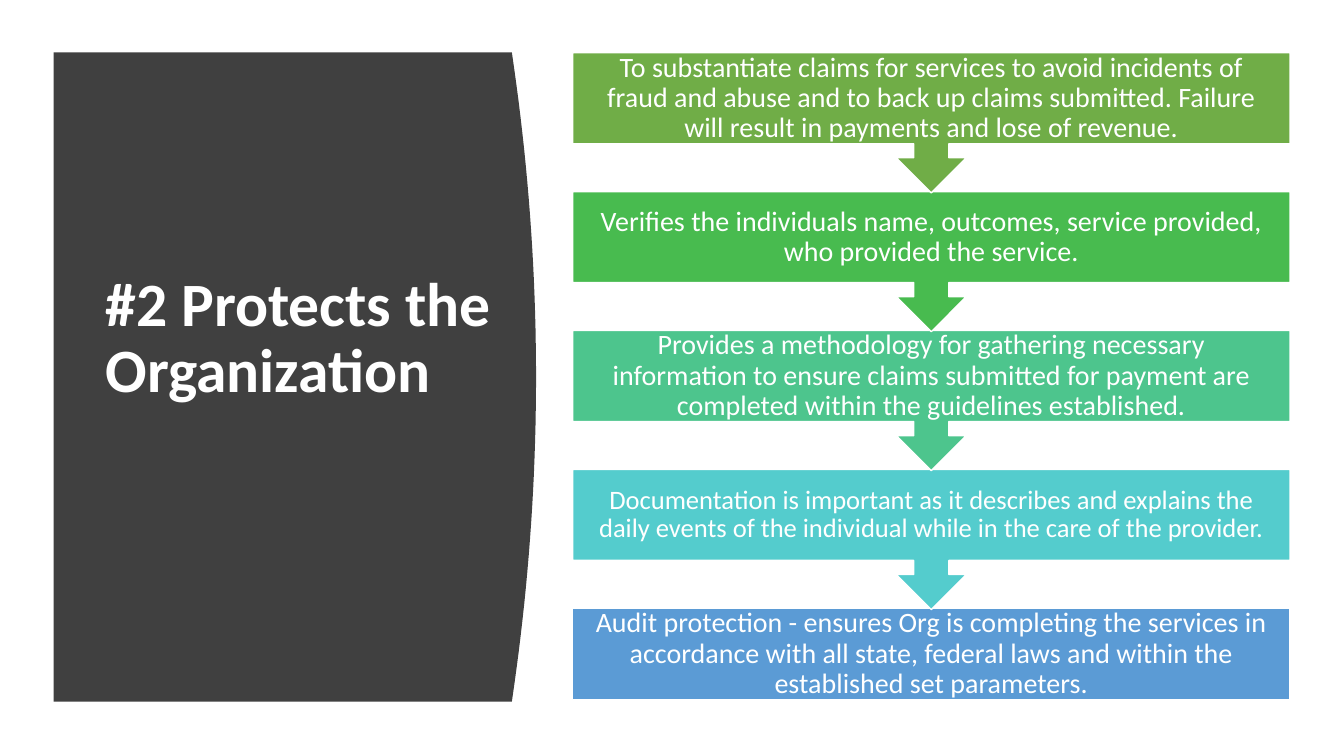
"""Build the slide "#2 Protects the Organization" with its chain of five reasons."""
from pptx import Presentation
from pptx.dml.color import RGBColor
from pptx.enum.shapes import MSO_SHAPE as Shape
from pptx.enum.text import MSO_ANCHOR as Anchor, PP_ALIGN as Align
from pptx.util import Cm, Pt


def paint(fill, color):
    fill.solid()
    fill.fore_color.rgb = RGBColor.from_string(color)


def write(shape, text, size, align, side_margin, bold=False):
    frame = shape.text_frame
    frame.text = text
    frame.word_wrap = True
    frame.vertical_anchor = Anchor.MIDDLE
    frame.margin_left = frame.margin_right = Cm(side_margin)
    frame.margin_top = frame.margin_bottom = 0
    paragraph = frame.paragraphs[0]
    paragraph.alignment = align
    paragraph.line_spacing = 0.9
    font = paragraph.runs[0].font
    font.name = "Calibri"
    font.size = Pt(size)
    font.bold = bold
    paint(font.fill, "FFFFFF")


presentation = Presentation()
presentation.slide_width = Cm(33.87)
presentation.slide_height = Cm(19.05)
slide = presentation.slides.add_slide(presentation.slide_layouts[6])

panel_left, panel_edge, bulge = 1.35, 12.9, 0.61
panel_middle, half_height = 9.5, 8.18
steps = 20
curve = []
for step in range(-steps, steps + 1):
    ratio = step / steps
    curve.append((Cm(panel_edge + bulge * (1 - ratio ** 2)),
                  Cm(panel_middle + half_height * ratio)))
builder = slide.shapes.build_freeform(Cm(panel_left), Cm(panel_middle - half_height))
builder.add_line_segments(curve + [(Cm(panel_left), Cm(panel_middle + half_height))])
panel = builder.convert_to_shape()
panel.shadow.inherit = False
paint(panel.fill, "404040")
panel.line.fill.background()

title = slide.shapes.add_textbox(Cm(2.41), Cm(1.9), Cm(10.54), Cm(13.31))
write(title, "#2 Protects the Organization", 44, Align.LEFT, 0.25, bold=True)

reasons = [
    ("To substantiate claims for services to avoid incidents of fraud and abuse and to back up "
     "claims submitted. Failure will result in payments and lose of revenue.", "70AD47", 20),
    ("Verifies the individuals name, outcomes, service provided, who provided the service.",
     "48BB4F", 20),
    ("Provides a methodology for gathering necessary information to ensure claims submitted "
     "for payment are completed within the guidelines established.", "4DC58D", 20),
    ("Documentation is important as it describes and explains the daily events of the "
     "individual while in the care of the provider.", "54CCCD", 19),
    ("Audit protection - ensures Org is completing the services in accordance with all state, "
     "federal laws and within the established set parameters.", "5B9BD5", 20),
]
first_top, pitch = 1.33, 3.5
callout_height, box_height = 3.53, 2.3
last = len(reasons) - 1
for index in range(last, -1, -1):
    text, color, size = reasons[index]
    kind, height = Shape.DOWN_ARROW_CALLOUT, callout_height
    if index == last:
        kind, height = Shape.RECTANGLE, box_height
    box = slide.shapes.add_shape(
        kind, Cm(14.43), Cm(first_top + index * pitch), Cm(18.08), Cm(height))
    box.shadow.inherit = False
    paint(box.fill, color)
    paint(box.line.fill, "FFFFFF")
    box.line.width = Pt(1)
    write(box, text, size, Align.CENTER, 0.4)

presentation.save("out.pptx")
